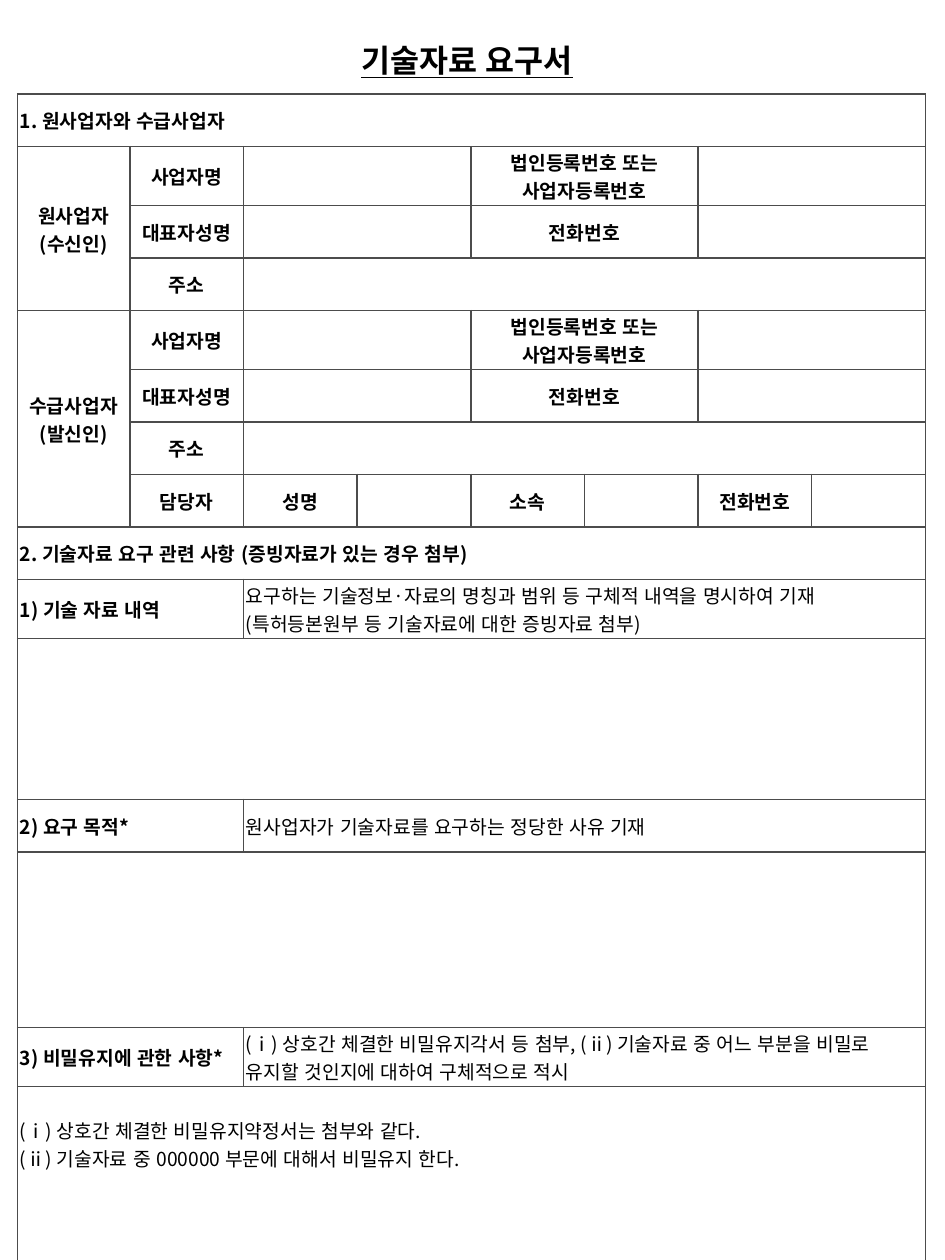
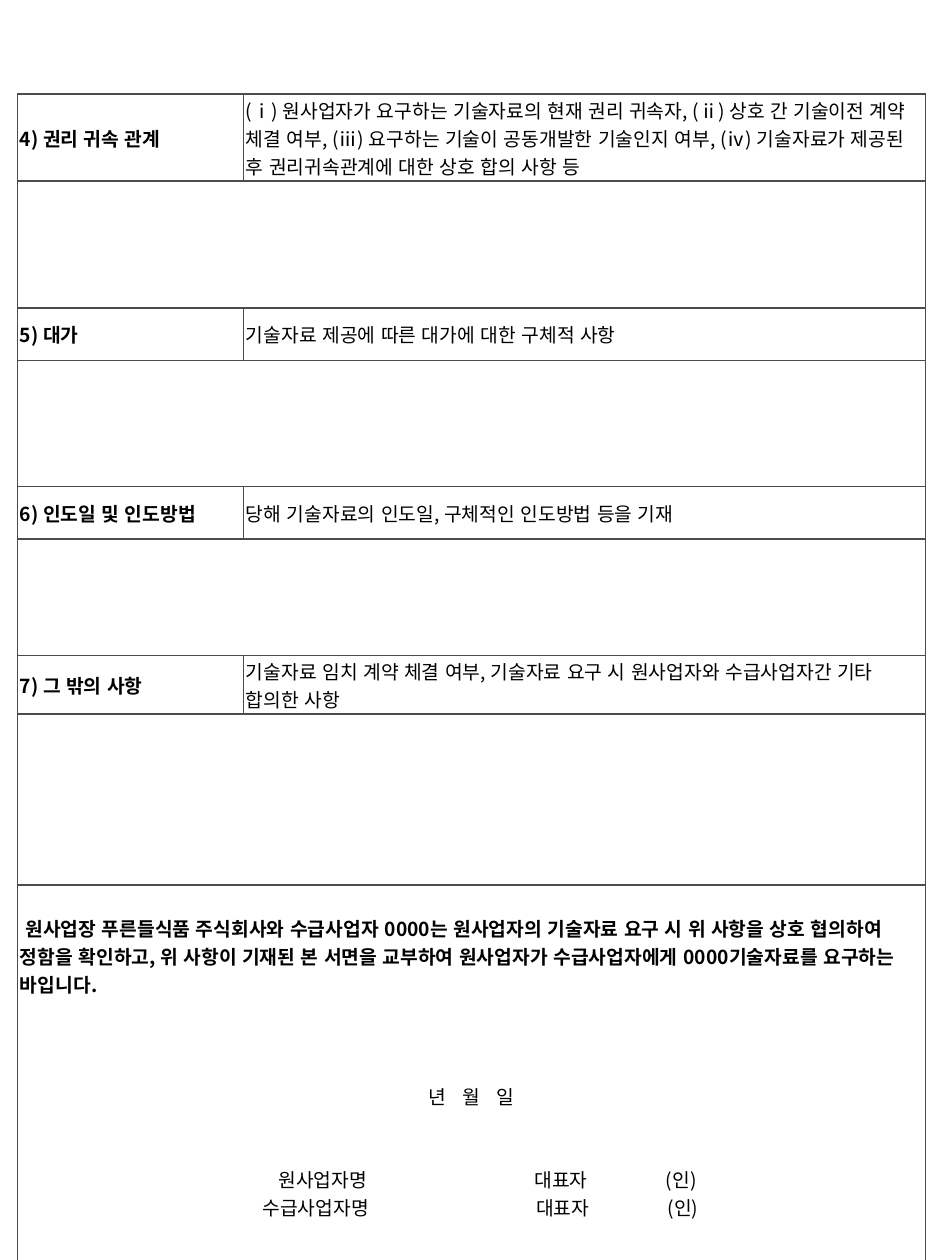
from lxml.etree import SubElement
from pptx import Presentation
from pptx.dml.color import RGBColor
from pptx.enum.lang import MSO_LANGUAGE_ID
from pptx.enum.text import MSO_ANCHOR, MSO_AUTO_SIZE, PP_ALIGN
from pptx.oxml import parse_xml
from pptx.oxml.ns import nsdecls, qn
from pptx.util import Pt

FONT = "Noto Sans CJK KR"
INK, PAPER, RULE = "000000", "FFFFFF", "4C4C4C"
TABLE_LEFT, TABLE_TOP, LINE, MARGIN = 10, 53.8, 15.93, 1.4
FIRST_COLUMN, COLUMN = 64.2, 64.95
ROW, TWO_LINES, THREE_LINES = 30, 33.7, 49.7

STYLES = {
    "title": {"size": Pt(18), "bold": True, "underline": True},
    "label": {"size": Pt(11), "bold": True},
    "heading": {"size": Pt(11), "bold": True},
    "note": {"size": Pt(11), "bold": False},
}
ALIGNMENTS = {"label": PP_ALIGN.CENTER}


def colour(value):
    """Turn a hex string into a colour."""
    return RGBColor.from_string(value)


class FormBuilder:
    """Holds the form style and the current slide."""

    def __init__(self):
        self.presentation = Presentation()
        self.presentation.slide_width = Pt(540)
        self.presentation.slide_height = Pt(720)
        self.slide = None

    def new_slide(self, layout_name):
        """Start a slide on the named layout."""
        layout = self.presentation.slide_layouts.get_by_name(layout_name)
        self.slide = self.presentation.slides.add_slide(layout)

    def paragraph(self, paragraph, text, style, before=0, tabs=()):
        """Write one styled paragraph."""
        if tabs:
            tab_list = SubElement(paragraph._p.get_or_add_pPr(), qn("a:tabLst"))
            for position, side in tabs:
                SubElement(tab_list, qn("a:tab"), pos=str(Pt(position)), algn=side)
        paragraph.alignment = ALIGNMENTS.get(style, PP_ALIGN.LEFT)
        paragraph.space_before = Pt(before)
        run = paragraph.add_run()
        run.text = text
        formats = {"name": FONT, "language_id": MSO_LANGUAGE_ID.KOREAN, **STYLES[style]}
        for name, value in formats.items():
            setattr(run.font, name, value)
        run.font.color.rgb = colour(INK)
        SubElement(run._r.get_or_add_rPr(), qn("a:ea"), typeface=FONT)

    def title(self, text, left, top, width, height):
        """Place the title placeholder."""
        shape = self.slide.shapes.title
        box = {"left": left, "top": top, "width": width, "height": height}
        for name, value in box.items():
            setattr(shape, name, Pt(value))
        frame = shape.text_frame
        formats = {"word_wrap": False, "vertical_anchor": MSO_ANCHOR.TOP,
                   "auto_size": MSO_AUTO_SIZE.SHAPE_TO_FIT_TEXT}
        for name, value in formats.items():
            setattr(frame, name, value)
        self.paragraph(frame.paragraphs[0], text, "title")

    def table(self, columns, rows):
        """Add a ruled white table and return it."""
        frame = self.slide.shapes.add_table(
            len(rows), len(columns), Pt(TABLE_LEFT), Pt(TABLE_TOP),
            Pt(sum(columns)), Pt(sum(rows)))
        table = frame.table
        table.first_row = table.horz_banding = False
        for column, width in zip(table.columns, columns):
            column.width = Pt(width)
        for row, height in zip(table.rows, rows):
            row.height = Pt(height)
        for cell in table.iter_cells():
            self.plain_cell(cell)
        return table

    def plain_cell(self, cell):
        """Give a cell its fill, margins and borders."""
        cell.fill.solid()
        cell.fill.fore_color.rgb = colour(PAPER)
        formats = {"vertical_anchor": MSO_ANCHOR.MIDDLE,
                   "margin_left": Pt(MARGIN), "margin_right": Pt(MARGIN),
                   "margin_top": Pt(0.7), "margin_bottom": Pt(0.7)}
        for name, value in formats.items():
            setattr(cell, name, value)
        properties = cell._tc.get_or_add_tcPr()
        for index, side in enumerate(("lnL", "lnR", "lnT", "lnB")):
            properties.insert(index, parse_xml(
                f'<a:{side} {nsdecls("a")} w="{Pt(1)}"><a:solidFill>'
                f'<a:srgbClr val="{RULE}"/></a:solidFill></a:{side}>'))

    def cell(self, table, row, column, lines=(), style="label", down=1, across=1):
        """Merge a block of cells and write its lines."""
        cell = table.cell(row, column)
        if down * across > 1:
            cell.merge(table.cell(row + down - 1, column + across - 1))
        for index, line in enumerate(lines):
            frame = cell.text_frame
            paragraph = frame.add_paragraph() if index else frame.paragraphs[0]
            self.paragraph(paragraph, line, style)
        return cell

    def item(self, table, row, heading, note, split, end):
        """Write a heading with its note above a full-width answer row."""
        self.cell(table, row, 0, [heading], "heading", across=split)
        self.cell(table, row, split, [note], "note", across=end - split)
        return self.cell(table, row + 1, 0, across=end)

    def party(self, table, row, name, down):
        """Write the identity rows of one business party."""
        self.cell(table, row, 0, name, down=down)
        pairs = [("사업자명", ["법인등록번호 또는", "사업자등록번호"]),
                 ("대표자성명", ["전화번호"])]
        for offset, (left, right) in enumerate(pairs):
            self.cell(table, row + offset, 1, [left])
            self.cell(table, row + offset, 2, across=2)
            self.cell(table, row + offset, 4, right, across=2)
            self.cell(table, row + offset, 6, across=2)
        self.cell(table, row + 2, 1, ["주소"])
        self.cell(table, row + 2, 2, across=6)

    def request_slide(self):
        """Build the parties and the first three items."""
        self.new_slide("Title Only")
        rows = [ROW, TWO_LINES, ROW, ROW, TWO_LINES, ROW, ROW, ROW, ROW,
                TWO_LINES, 92, ROW, 100.5, TWO_LINES, 113.5]
        table = self.table([FIRST_COLUMN] + [COLUMN] * 7, rows)
        self.cell(table, 0, 0, ["1. 원사업자와 수급사업자"], "heading", across=8)
        self.party(table, 1, ["원사업자", "(수신인)"], 3)
        self.party(table, 4, ["수급사업자", "(발신인)"], 4)
        self.cell(table, 7, 1, ["담당자"])
        for column, label in zip((2, 4, 6), ("성명", "소속", "전화번호")):
            self.cell(table, 7, column, [label])
        self.cell(table, 8, 0, ["2. 기술자료 요구 관련 사항 (증빙자료가 있는 경우 첨부)"],
                  "heading", across=8)
        items = [
            ("1) 기술 자료 내역",
             "요구하는 기술정보·자료의 명칭과 범위 등 구체적 내역을 명시하여 기재"
             "(특허등본원부 등 기술자료에 대한 증빙자료 첨부)"),
            ("2) 요구 목적*", "원사업자가 기술자료를 요구하는 정당한 사유 기재"),
            ("3) 비밀유지에 관한 사항*",
             "(ⅰ) 상호간 체결한 비밀유지각서 등 첨부, (ⅱ) 기술자료 중 어느 부분을 "
             "비밀로 유지할 것인지에 대하여 구체적으로 적시"),
        ]
        for index, (heading, note) in enumerate(items):
            answer = self.item(table, 9 + 2 * index, heading, note, 2, 8)
        answer.margin_top = Pt(0.7 + LINE)
        answer.margin_bottom = Pt(0.7 + 4 * LINE)
        secrecy = ["(ⅰ) 상호간 체결한 비밀유지약정서는 첨부와 같다.",
                   "(ⅱ) 기술자료 중 000000 부문에 대해서 비밀유지 한다."]
        self.cell(table, 14, 0, secrecy, "note")
        self.title("기술자료 요구서", 199.2, 20, 147.5, 29)

    def agreement_slide(self):
        """Build the last four items and the signature block."""
        self.new_slide("Blank")
        table = self.table([FIRST_COLUMN + COLUMN, 6 * COLUMN],
                           [THREE_LINES, 72.5, ROW, 72, ROW, 66.5,
                            TWO_LINES, 97.5, 225])
        items = [
            ("4) 권리 귀속 관계",
             "(ⅰ) 원사업자가 요구하는 기술자료의 현재 권리 귀속자, (ⅱ) 상호 간 기술이전 "
             "계약 체결 여부, (ⅲ) 요구하는 기술이 공동개발한 기술인지 여부, (ⅳ) "
             "기술자료가 제공된 후 권리귀속관계에 대한 상호 합의 사항 등"),
            ("5) 대가", "기술자료 제공에 따른 대가에 대한 구체적 사항"),
            ("6) 인도일 및 인도방법",
             "당해 기술자료의 인도일, 구체적인 인도방법 등을 기재"),
            ("7) 그 밖의 사항",
             "기술자료 임치 계약 체결 여부, 기술자료 요구 시 원사업자와 수급사업자간 "
             "기타 합의한 사항"),
        ]
        for index, (heading, note) in enumerate(items):
            self.item(table, 2 * index, heading, note, 1, 2)
        statement = (" 원사업장 푸른들식품 주식회사와 수급사업자 0000는 원사업자의 기술자료 "
                     "요구 시 위 사항을 상호 협의하여 정함을 확인하고, 위 사항이 기재된 본 "
                     "서면을 교부하여 원사업자가 수급사업자에게 0000기술자료를 요구하는 "
                     "바입니다.")
        closing = self.cell(table, 8, 0, [statement], "heading", across=2)
        closing.margin_top = Pt(0.7 + LINE)
        closing.margin_bottom = Pt(0.7 + 2 * LINE)
        date_tabs = [(233.5, "l"), (253, "l"), (272.5, "l")]
        buyer_tabs = [(198.5, "r"), (294, "l"), (369, "l")]
        supplier_tabs = [(position + 1, side) for position, side in buyer_tabs]
        lines = [("\t년\t월\t일", 3, date_tabs),
                 ("\t원사업자명\t대표자\t(인)", 2, buyer_tabs),
                 ("\t수급사업자명\t대표자\t(인)", 0, supplier_tabs)]
        for text, gap, tabs in lines:
            paragraph = closing.text_frame.add_paragraph()
            self.paragraph(paragraph, text, "note", gap * LINE, tabs)


def main():
    """Build and save the form."""
    form = FormBuilder()
    form.request_slide()
    form.agreement_slide()
    form.presentation.save("out.pptx")


if __name__ == "__main__":
    main()
